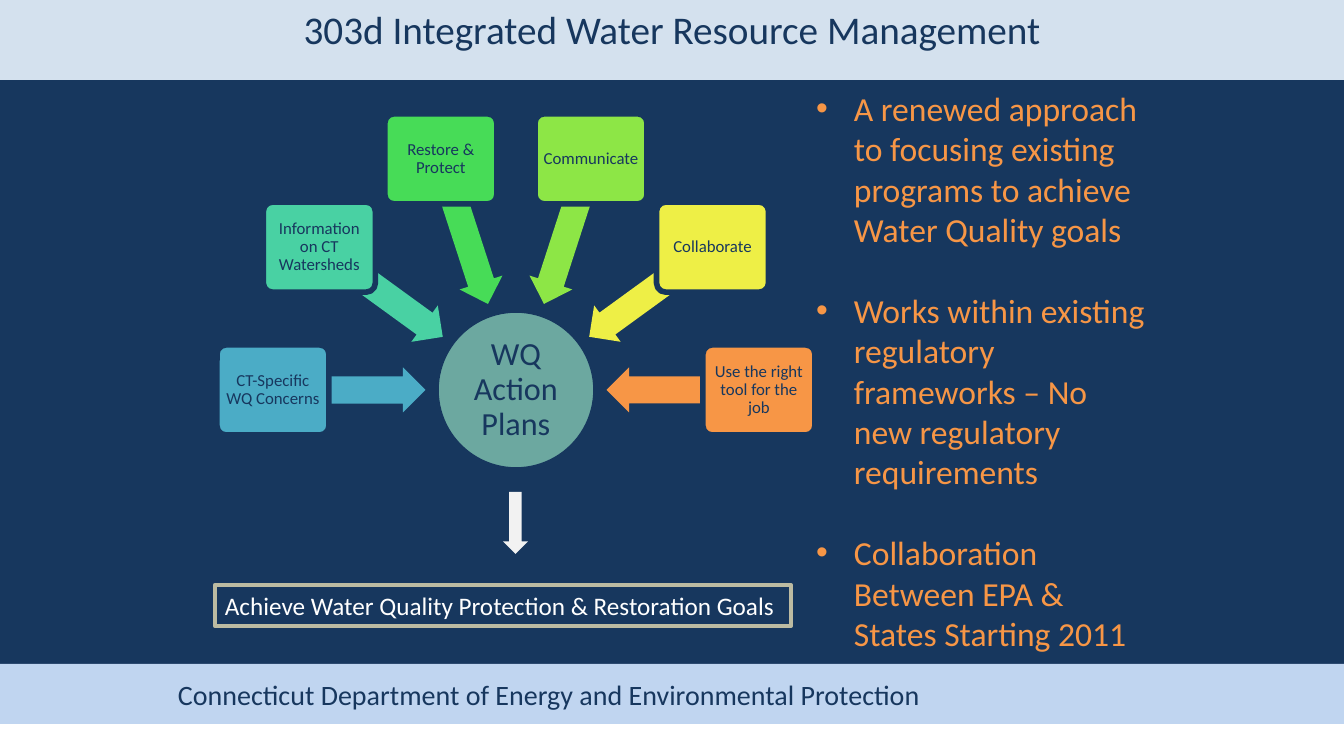
"""Build the integrated water resource management slide."""
from math import cos, radians, sin

from pptx import Presentation
from pptx.dml.color import RGBColor
from pptx.enum.shapes import MSO_SHAPE
from pptx.enum.text import MSO_ANCHOR, MSO_AUTO_SIZE, PP_ALIGN
from pptx.util import Emu, Pt

RECT, ROUND, OVAL = MSO_SHAPE.RECTANGLE, MSO_SHAPE.ROUNDED_RECTANGLE, MSO_SHAPE.OVAL
LEFT_ARROW, DOWN_ARROW = MSO_SHAPE.LEFT_ARROW, MSO_SHAPE.DOWN_ARROW
TOP, MIDDLE = MSO_ANCHOR.TOP, MSO_ANCHOR.MIDDLE
LEFT, CENTER = PP_ALIGN.LEFT, PP_ALIGN.CENTER
FIXED = MSO_AUTO_SIZE.NONE

NAVY, ORANGE, WHITE = "17375E", "F79646", "FFFFFF"
TITLE = "303d Integrated Water Resource Management"
FOOTER = "Connecticut Department of Energy and Environmental Protection"
HUB = "WQ Action Plans"
GOAL = "Achieve Water Quality Protection & Restoration Goals"
INPUTS = [
    ("CT-Specific WQ Concerns", "4BACC6"),
    ("Information on CT Watersheds", "49D1A3"),
    ("Restore & Protect", "47DC57"),
    ("Communicate", "8DE646"),
    ("Collaborate", "EEEF46"),
    ("Use the right tool for the job", ORANGE),
]
POINTS = [
    "A renewed approach to focusing existing programs to achieve Water Quality goals",
    "Works within existing regulatory frameworks – No new regulatory requirements",
    "Collaboration Between EPA & States Starting 2011",
]
BANDS = [(714, 42, WHITE), (0, 80, "D4E1EE"), (664, 60, "C0D5F0")]

WIDE, HIGH = 1344, 756
MID_X, MID_Y = 516, 390
BOX_RING, ARROW_RING, STEP = 243, 167, 36
SCALE = 914400 / 100.8


def px(n):
    return Emu(round(n * SCALE))


def color(code):
    return RGBColor.from_string(code)


def place(shape, x, y, w, h):
    shape.left, shape.top, shape.width, shape.height = map(px, (x, y, w, h))


def write(shape, *lines, size, ink=NAVY, align=LEFT, anchor=TOP,
          pad=None, wrap=True, pitch=1.0, gap=0):
    frame = shape.text_frame
    frame.auto_size, frame.word_wrap = FIXED, wrap
    frame.vertical_anchor = anchor
    if pad is not None:
        frame.margin_left = frame.margin_right = px(pad)
        frame.margin_top = frame.margin_bottom = px(pad)
    for i, line in enumerate(lines):
        para = frame.paragraphs[0] if i == 0 else frame.add_paragraph()
        para.alignment, para.line_spacing = align, pitch
        para.space_before = Pt(gap if i else 0)
        run = para.add_run()
        run.text = line
        run.font.name, run.font.size = "Calibri", Pt(size)
        run.font.color.rgb = color(ink)


def draw(slide, kind, x, y, w, h, fill=None, line=None, weight=4, adjust=()):
    shape = slide.shapes.add_shape(kind, *map(px, (x, y, w, h)))
    shape.shadow.inherit = False
    for i, value in enumerate(adjust):
        shape.adjustments[i] = value
    if fill:
        shape.fill.solid()
        shape.fill.fore_color.rgb = color(fill)
    else:
        shape.fill.background()
    if line:
        shape.line.color.rgb = color(line)
        shape.line.width = Pt(weight)
    else:
        shape.line.fill.background()
    return shape


def orbit(slide, kind, angle, ring, w, h, **look):
    x = MID_X + ring * cos(radians(angle)) - w / 2
    y = MID_Y + ring * sin(radians(angle)) - h / 2
    return draw(slide, kind, x, y, w, h, **look)


def main():
    deck = Presentation()
    deck.slide_width, deck.slide_height = px(WIDE), px(HIGH)
    slide = deck.slides.add_slide(deck.slide_layouts[1])
    slide.background.fill.solid()
    slide.background.fill.fore_color.rgb = color(NAVY)
    title, body = slide.placeholders

    for y, h, fill in BANDS:
        band = draw(slide, RECT, 0, y, WIDE, h, fill)
        title._element.addprevious(band._element)

    place(title, 168, 0, 1008, 126)
    write(title, TITLE, size=28, align=CENTER)
    place(body, 806, 83, 353, 581)
    write(body, *POINTS, size=24, ink=ORANGE, gap=29)
    footer = slide.shapes.add_textbox(px(168), px(673), px(1157), px(44))
    write(footer, FOOTER, size=20)

    hub = orbit(slide, OVAL, 0, 0, 160, 160, fill="6CA8A0", line=NAVY)
    write(hub, HUB, size=23, align=CENTER, anchor=MIDDLE, pad=2, pitch=0.9)
    for i, (label, fill) in enumerate(INPUTS):
        angle = 180 + STEP * i
        arrow = orbit(slide, LEFT_ARROW, angle, ARROW_RING, 153, 45,
                      fill=fill, adjust=(0.6, 0.5))
        arrow.rotation = angle % 360
        box = orbit(slide, ROUND, angle, BOX_RING, 112, 90,
                    fill=fill, line=NAVY, adjust=(0.1,))
        write(box, label, size=12, align=CENTER, anchor=MIDDLE, pad=3, pitch=0.9)

    draw(slide, DOWN_ARROW, 503, 492, 25, 62, "F2F2F2")
    goal = draw(slide, RECT, 215, 585, 576, 41, line="BCBBA2", weight=3)
    write(goal, GOAL, size=18, ink=WHITE, wrap=False)
    deck.save("out.pptx")


if __name__ == "__main__":
    main()
